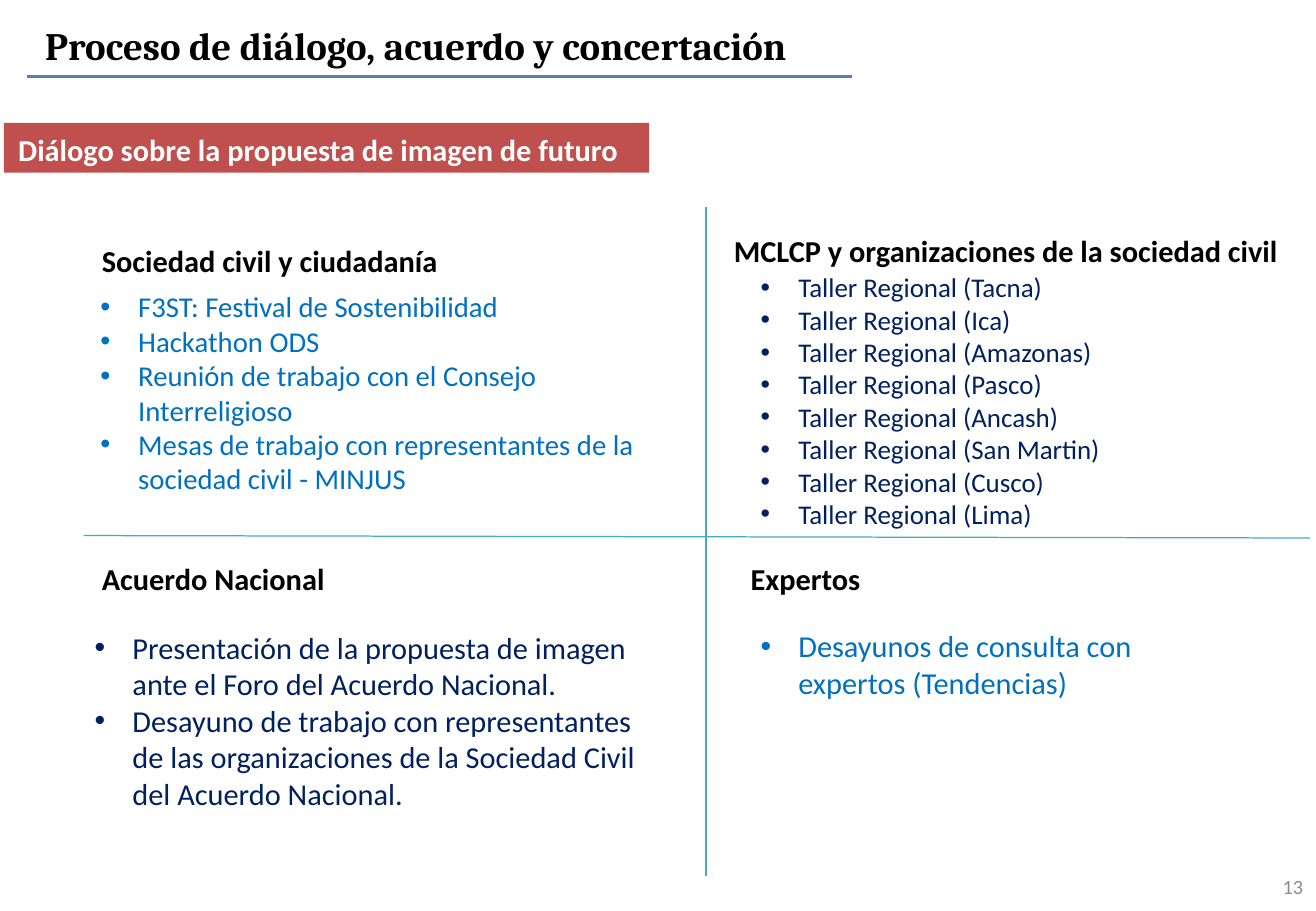
"""Build the slide on the dialogue, agreement and consensus process."""
from dataclasses import dataclass

from lxml.etree import SubElement
from pptx import Presentation
from pptx.dml.color import RGBColor as Rgb
from pptx.enum.shapes import MSO_CONNECTOR as Connector, MSO_SHAPE as Shape
from pptx.enum.text import MSO_ANCHOR as Anchor, MSO_AUTO_SIZE as AutoSize, PP_ALIGN as Align
from pptx.oxml.ns import qn
from pptx.util import Cm, Pt


@dataclass(frozen=True)
class Theme:
    heading_font: str = "Cambria"
    body_font: str = "Calibri"
    black: str = "000000"
    white: str = "FFFFFF"
    red: str = "C0504D"
    blue: str = "0070C0"
    navy: str = "002060"
    grey: str = "8C8C8C"
    rule: str = "4F81BD"
    divider: str = "46AAC5"
    title_size: int = 23
    head_size: int = 18
    number_size: int = 12


class DialogueSlide:
    def __init__(self, deck, theme):
        self.theme = theme
        self.slide = deck.slides.add_slide(deck.slide_layouts[5])

    def set_text(self, frame, text, size, color, bold=False, font=None, align=Align.LEFT):
        frame.text = text
        frame.word_wrap = True
        frame.auto_size = AutoSize.NONE
        for paragraph in frame.paragraphs:
            paragraph.alignment = align
            for run in paragraph.runs:
                run.font.name = font or self.theme.body_font
                run.font.size = Pt(size)
                run.font.bold = bold
                run.font.color.rgb = Rgb.from_string(color)

    def title(self, text, left, top, width, height):
        heading = self.slide.shapes.title
        heading.left, heading.top = Cm(left), Cm(top)
        heading.width, heading.height = Cm(width), Cm(height)
        heading.text_frame.vertical_anchor = Anchor.TOP
        self.set_text(heading.text_frame, text, self.theme.title_size, self.theme.black,
                      True, self.theme.heading_font)

    def banner(self, text, left, top, width, height):
        band = self.slide.shapes.add_shape(
            Shape.RECTANGLE, Cm(left), Cm(top), Cm(width), Cm(height))
        band.shadow.inherit = False
        band.fill.solid()
        band.fill.fore_color.rgb = Rgb.from_string(self.theme.red)
        band.line.fill.background()
        frame = band.text_frame
        frame.vertical_anchor = Anchor.TOP
        frame.margin_left, frame.margin_top = Cm(0.3), Cm(0.18)
        self.set_text(frame, text, self.theme.head_size, self.theme.white, True)

    def label(self, text, left, top, width, height, size, color, **style):
        box = self.slide.shapes.add_textbox(Cm(left), Cm(top), Cm(width), Cm(height))
        self.set_text(box.text_frame, text, size, color, **style)
        return box.text_frame

    def head(self, text, left, top, width):
        self.label(text, left, top, width, 1.02, self.theme.head_size,
                   self.theme.black, bold=True)

    def bullets(self, items, left, top, width, height, size, color):
        frame = self.label("\n".join(items), left, top, width, height, size, color)
        for paragraph in frame.paragraphs:
            properties = paragraph._p.get_or_add_pPr()
            properties.set("marL", str(Cm(0.79)))
            properties.set("indent", str(-Cm(0.79)))
            SubElement(properties, qn("a:buFont"), typeface="Arial")
            SubElement(properties, qn("a:buChar"), char="•")

    def number(self, text, left, top, width, height):
        frame = self.label(text, left, top, width, height, self.theme.number_size,
                           self.theme.grey, align=Align.RIGHT)
        frame.vertical_anchor = Anchor.MIDDLE

    def line(self, x1, y1, x2, y2, color, weight):
        rule = self.slide.shapes.add_connector(
            Connector.STRAIGHT, Cm(x1), Cm(y1), Cm(x2), Cm(y2))
        rule.line.color.rgb = Rgb.from_string(color)
        rule.line.width = Pt(weight)
        SubElement(rule._element.spPr, qn("a:effectLst"))


def main():
    theme = Theme()
    deck = Presentation()
    deck.slide_width, deck.slide_height = Cm(27.51), Cm(19.05)
    page = DialogueSlide(deck, theme)

    page.title("Proceso de diálogo, acuerdo y concertación", 0.69, 0.33, 18.59, 1.24)
    page.banner("Diálogo sobre la propuesta de imagen de futuro", 0.08, 2.57, 13.49, 1.04)
    page.line(0.56, 1.6, 17.81, 1.6, theme.rule, 2.25)
    page.number("13", 21.06, 18.03, 6.43, 1.02)

    regions = ("Tacna", "Ica", "Amazonas", "Pasco", "Ancash", "San Martin", "Cusco", "Lima")
    quadrants = (
        ("Sociedad civil y ciudadanía", (1.88, 4.93, 7.59),
         ("F3ST: Festival de Sostenibilidad",
          "Hackathon ODS",
          "Reunión de trabajo con el Consejo Interreligioso",
          "Mesas de trabajo con representantes de la sociedad civil - MINJUS"),
         (1.85, 5.92, 12.42, 4.62), 17, theme.blue),
        ("MCLCP y organizaciones de la sociedad civil", (15.09, 4.72, 11.91),
         [f"Taller Regional ({region})" for region in regions],
         (15.65, 5.54, 8.64, 5.74), 16, theme.navy),
        ("Acuerdo Nacional", (1.88, 11.58, 5.21),
         ("Presentación de la propuesta de imagen ante el Foro del Acuerdo Nacional.",
          "Desayuno de trabajo con representantes de las organizaciones "
          "de la Sociedad Civil del Acuerdo Nacional."),
         (1.73, 13.03, 12.42, 4.11), 18, theme.navy),
        ("Expertos", (15.44, 11.58, 5.79),
         ("Desayunos de consulta con expertos (Tendencias)",),
         (15.65, 13, 8.64, 1.8), 18, theme.blue),
    )
    for group, head_place, activities, list_place, size, color in quadrants:
        page.head(group, *head_place)
        page.bullets(activities, *list_place, size, color)

    page.line(1.75, 11.2, 27.38, 11.25, theme.divider, 0.75)
    page.line(14.76, 4.32, 14.76, 18.31, theme.divider, 0.75)
    deck.save("out.pptx")


if __name__ == "__main__":
    main()
